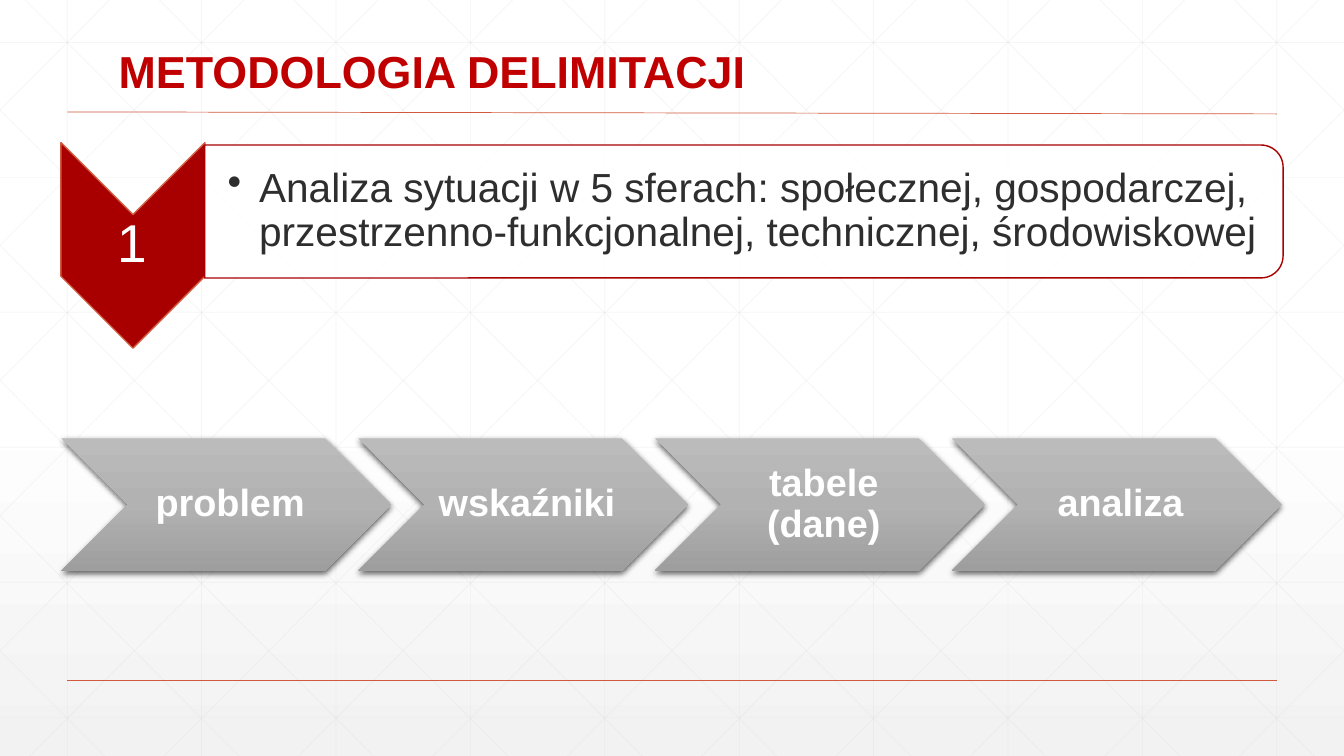
"""Build the slide on the delimitation methodology."""
from lxml import etree
from pptx import Presentation, util as u
from pptx.dml.color import RGBColor
from pptx.enum import shapes, text
from pptx.oxml.ns import qn

WHITE = RGBColor(0xFF, 0xFF, 0xFF)
PALE = RGBColor(0xF2, 0xF2, 0xF2)
GRID = RGBColor(0xD9, 0xD9, 0xD9)
RULE = RGBColor(0xD1, 0x5A, 0x3E)
RED = RGBColor(0xA8, 0x00, 0x00)
TITLE = RGBColor(0xC0, 0x00, 0x00)
INK = RGBColor(0x2D, 0x2E, 0x2D)
GRAY_TOP = RGBColor(0xBB, 0xBB, 0xBB)
GRAY_MIDDLE = RGBColor(0xB2, 0xB2, 0xB2)
GRAY_BOTTOM = RGBColor(0x9E, 0x9E, 0x9E)
BLACK = RGBColor(0, 0, 0)
WIDTH, HEIGHT = 33.87, 19.05


def paint_gradient(fill, element, stops):
    fill.gradient()
    fill.gradient_angle = 270
    stop_list = next(element.iter(qn("a:gsLst")))
    for old in list(stop_list):
        stop_list.remove(old)
    for percent, color in stops:
        stop = etree.SubElement(stop_list, qn("a:gs"), pos=str(percent * 1000))
        etree.SubElement(stop, qn("a:srgbClr"), val=str(color))


def put_text(place, words, size, color, bold=False, insets=(0.25, 0.13, 0.25, 0.13),
             align=text.PP_ALIGN.CENTER, anchor=text.MSO_ANCHOR.MIDDLE):
    box = page.shapes.add_textbox(*map(u.Cm, place))
    frame = box.text_frame
    frame.text = words
    frame.word_wrap = True
    frame.vertical_anchor = anchor
    frame.margin_left, frame.margin_top, frame.margin_right, frame.margin_bottom = map(u.Cm, insets)
    para = frame.paragraphs[0]
    para.alignment = align
    para.line_spacing = 0.9
    font = para.runs[0].font
    font.name, font.size, font.bold = "Arial", u.Pt(size), bold
    font.color.rgb = color
    return para


deck = Presentation()
deck.slide_width, deck.slide_height = u.Cm(WIDTH), u.Cm(HEIGHT)
page = deck.slides.add_slide(deck.slide_layouts[6])
paint_gradient(page.background.fill, page.element, [(0, WHITE), (53, WHITE), (100, PALE)])

pitch = WIDTH / 10
run = 18.94
grid = [((k + 0.5) * pitch, 0, (k + 0.5) * pitch, HEIGHT) for k in range(10)]
grid += [(0, 1.07 + 3.4 * k, WIDTH, 1.07 + 3.4 * k) for k in range(6)]
for k in range(-5, 10):
    start = 0.63 + k * pitch
    left, right = max(start, 0), min(start + run, WIDTH)
    top, bottom = [(x - start) * HEIGHT / run for x in (left, right)]
    grid += [(left, top, right, bottom), (WIDTH - left, top, WIDTH - right, bottom)]

lines = [(ends, GRID, 0.5, 25) for ends in grid]
lines += [((1.7, 17.15, 32.18, 17.15), RULE, 1, 100),
          ((1.7, 2.82, 32.18, 2.87), RULE, 0.5, 100)]
for ends, color, weight, opacity in lines:
    line = page.shapes.add_connector(shapes.MSO_CONNECTOR.STRAIGHT, *map(u.Cm, ends))
    line.line.color.rgb = color
    line.line.width = u.Pt(weight)
    properties = line.element.spPr
    if opacity < 100:
        tint = next(properties.iter(qn("a:srgbClr")))
        etree.SubElement(tint, qn("a:alpha"), val=str(opacity * 1000))
    etree.SubElement(properties, qn("a:effectLst"))

for k, step in enumerate(["problem", "wskaźniki", "tabele (dane)", "analiza"]):
    left = 1.55 + 7.48 * k
    chevron = page.shapes.add_shape(shapes.MSO_SHAPE.CHEVRON, u.Cm(left), u.Cm(11.05),
                                    u.Cm(8.31), u.Cm(3.33))
    paint_gradient(chevron.fill, chevron.element,
                   [(0, GRAY_TOP), (50, GRAY_MIDDLE), (100, GRAY_BOTTOM)])
    chevron.line.fill.background()
    chevron.shadow.inherit = False
    effects = next(chevron.element.iter(qn("a:effectLst")))
    shadow = etree.SubElement(effects, qn("a:outerShdw"), blurRad=str(u.Pt(4.5)),
                              dist=str(u.Pt(1.5)), dir="5400000", rotWithShape="0")
    shade = etree.SubElement(shadow, qn("a:srgbClr"), val=str(BLACK))
    etree.SubElement(shade, qn("a:alpha"), val="63000")
    put_text((left + 1.66, 11.05, 4.98, 3.33), step, 27, WHITE, True, (0.3, 0.1, 0.1, 0.1))

for kind, place, color, edge, opacity in [
        (shapes.MSO_SHAPE.CHEVRON, (0.76, 4.37, 5.18, 3.63), RED, RULE, 100),
        (shapes.MSO_SHAPE.ROUND_2_SAME_RECTANGLE, (17.07, -8.26, 3.35, 27.18), WHITE, RED, 90)]:
    panel = page.shapes.add_shape(kind, *map(u.Cm, place))
    panel.rotation = 90
    panel.shadow.inherit = False
    panel.fill.solid()
    panel.fill.fore_color.rgb = color
    if opacity < 100:
        tint = next(panel.element.iter(qn("a:srgbClr")))
        etree.SubElement(tint, qn("a:alpha"), val=str(opacity * 1000))
    panel.line.color.rgb = edge
    panel.line.width = u.Pt(1)

put_text((1.53, 5.41, 3.63, 1.55), "1", 38, WHITE, insets=(0.08,) * 4)
point = put_text((5.16, 3.81, 27, 3.02),
                 "Analiza sytuacji w 5 sferach: społecznej, gospodarczej, "
                 "przestrzenno-funkcjonalnej, technicznej, środowiskowej",
                 29, INK, insets=(0.58, 0.05, 0.05, 0.05), align=text.PP_ALIGN.LEFT)
indent = u.Cm(0.79)
layout = point.runs[0].font and next(point.runs[0].text and page.shapes[-1].element.iter(qn("a:pPr")))
layout.set("marL", str(indent))
layout.set("indent", str(-indent))
etree.SubElement(layout, qn("a:buChar"), char="•")

put_text((2.74, 1.12, 20.93, 1.5), "METODOLOGIA DELIMITACJI", 32, TITLE, True,
         align=text.PP_ALIGN.LEFT, anchor=text.MSO_ANCHOR.TOP)
deck.save("out.pptx")
